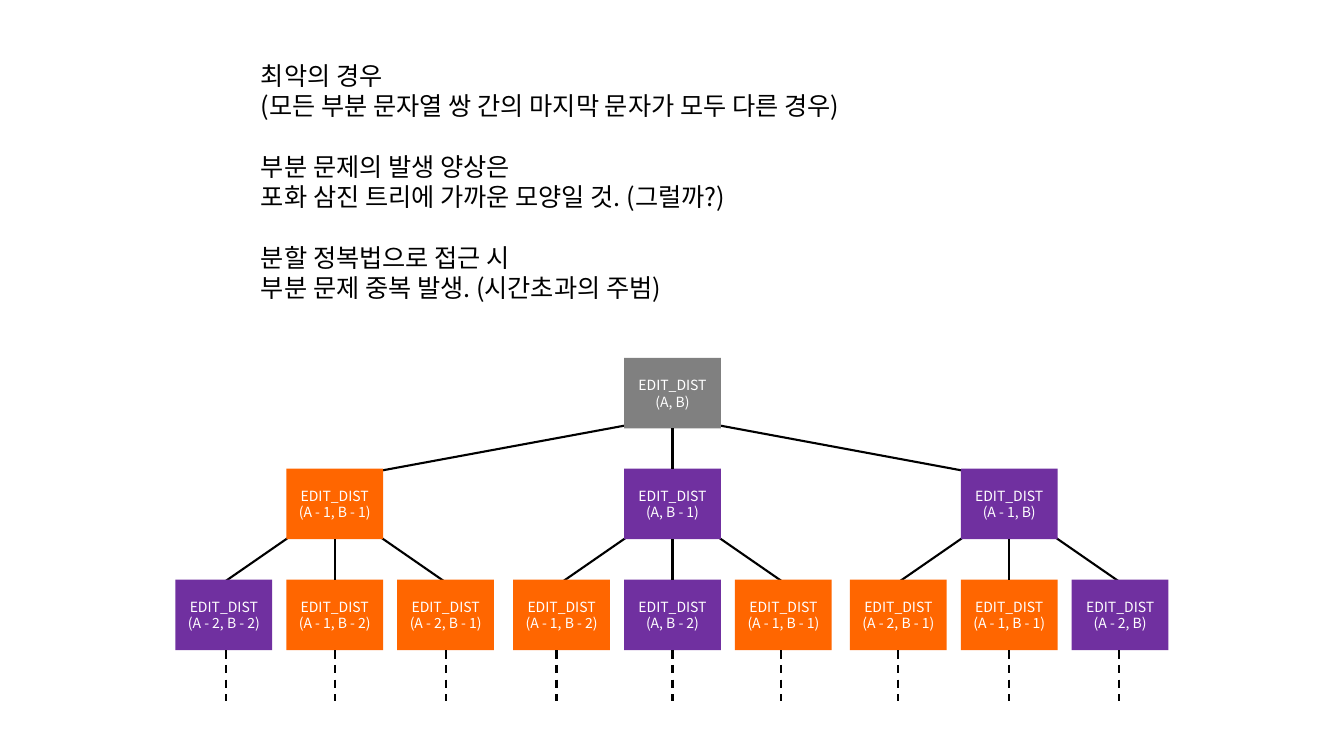
"""Build a slide showing the call tree of a recursive edit distance."""
from dataclasses import dataclass

from lxml import etree
from pptx import Presentation
from pptx import util as u
from pptx.dml.color import RGBColor
from pptx.enum import dml, shapes, text
from pptx.oxml.ns import qn

SCALE = 9144
FONT = "Noto Sans CJK KR"
BLACK, WHITE, GRAY = "000000", "FFFFFF", "808080"
ORANGE, PURPLE = "FF6600", "7030A0"
BOX_WIDTH, BOX_HEIGHT = 96, 70
ROOT_TOP, LEVEL_GAP, SIBLING_GAP = 355, 110, 110
STEM_LENGTH = 50
TOP, BOTTOM = 0, 2


@dataclass(frozen=True)
class Call:
    """One recursive call, with its box centre, level and stem offset."""
    arguments: str
    color: str
    center: int
    level: int
    stem_shift: int = 0

    @property
    def top(self) -> int:
        """Return the top of the box."""
        return ROOT_TOP + self.level * LEVEL_GAP

    @property
    def bottom(self) -> int:
        """Return the bottom of the box."""
        return self.top + BOX_HEIGHT


@dataclass(frozen=True)
class Branch:
    """A call of the middle level and its three leaves."""
    parent: Call
    leaves: tuple[Call, ...]


def make_branch(center: int, arguments: str, color: str,
                *leaves: tuple[str, str, int]) -> Branch:
    """Place three leaves evenly around their parent's centre."""
    return Branch(
        Call(arguments, color, center, 1),
        tuple(Call(words, fill, center + side * SIBLING_GAP, 2, shift)
              for side, (words, fill, shift) in zip((-1, 0, 1), leaves)))


ROOT = Call("(A, B)", GRAY, 667, 0)
BRANCHES = (
    make_branch(332, "(A - 1, B - 1)", ORANGE,
                ("(A - 2, B - 2)", PURPLE, 2),
                ("(A - 1, B - 2)", ORANGE, 0),
                ("(A - 2, B - 1)", ORANGE, 0)),
    make_branch(667, "(A, B - 1)", PURPLE,
                ("(A - 1, B - 2)", ORANGE, -5),
                ("(A, B - 2)", PURPLE, 0),
                ("(A - 1, B - 1)", ORANGE, -2)),
    make_branch(1001, "(A - 1, B)", PURPLE,
                ("(A - 2, B - 1)", ORANGE, 0),
                ("(A - 1, B - 1)", ORANGE, 0),
                ("(A - 2, B)", PURPLE, -1)),
)
NOTES = (
    ("최악의 경우", "(모든 부분 문자열 쌍 간의 마지막 문자가 모두 다른 경우)"),
    ("부분 문제의 발생 양상은", "포화 삼진 트리에 가까운 모양일 것. (그럴까?)"),
    ("분할 정복법으로 접근 시", "부분 문제 중복 발생. (시간초과의 주범)"),
)


def px(length: int) -> u.Emu:
    """Turn a length in px into EMU."""
    return u.Emu(length * SCALE)


def rgb(color: str) -> RGBColor:
    """Turn a hex string into a colour."""
    return RGBColor.from_string(color)


def style_paragraph(para, size: int, color: str) -> None:
    """Set the font and the line height of a paragraph."""
    para.font.name = FONT
    para.font.size = u.Pt(size)
    para.font.color.rgb = rgb(color)
    para.line_spacing = u.Pt(size * 1.2)
    properties = para._p.get_or_add_pPr().get_or_add_defRPr()
    etree.SubElement(properties, qn("a:ea")).set("typeface", FONT)


def add_line(page, start: tuple[int, int], end: tuple[int, int]):
    """Draw a straight black line."""
    line = page.shapes.add_connector(
        shapes.MSO_CONNECTOR.STRAIGHT, *map(px, start + end))
    line.line.color.rgb = rgb(BLACK)
    line.line.width = u.Pt(1.5)
    etree.SubElement(line._element.spPr, qn("a:effectLst"))
    return line


def add_call(page, call: Call):
    """Draw the box of one call."""
    box = page.shapes.add_shape(
        shapes.MSO_SHAPE.RECTANGLE, px(call.center - BOX_WIDTH // 2),
        px(call.top), px(BOX_WIDTH), px(BOX_HEIGHT))
    box.shadow.inherit = False
    box.fill.solid()
    box.fill.fore_color.rgb = rgb(call.color)
    box.line.fill.background()
    frame = box.text_frame
    frame.vertical_anchor = text.MSO_ANCHOR.MIDDLE
    frame.text = f"EDIT_DIST\n{call.arguments}"
    for para in frame.paragraphs:
        para.alignment = text.PP_ALIGN.CENTER
        style_paragraph(para, 10, WHITE)
    return box


def add_slanted_lines(page) -> None:
    """Draw the lines that fan out to the left and right children."""
    for side, branch in zip((-1, 0, 1), BRANCHES):
        parent = branch.parent
        if side:
            add_line(page, (ROOT.center + side * 46, ROOT.bottom - 3),
                     (parent.center - side * 40, parent.top + 3))
        for leaf_side in (-1, 1):
            add_line(page, (parent.center + leaf_side * 44, parent.bottom - 3),
                     (parent.center + leaf_side * 109, branch.leaves[0].top + 2))


def join_calls(page, upper: Call, lower: Call, boxes: dict) -> None:
    """Join two calls that stand one above the other."""
    line = add_line(page, (upper.center, upper.bottom),
                    (lower.center, lower.top))
    line.begin_connect(boxes[upper], BOTTOM)
    line.end_connect(boxes[lower], TOP)


def add_stem(page, leaf: Call, box) -> None:
    """Draw the dashed line below a leaf."""
    column = leaf.center + leaf.stem_shift
    stem = add_line(page, (column, leaf.bottom),
                    (column, leaf.bottom + STEM_LENGTH))
    stem.line.dash_style = dml.MSO_LINE.DASH
    if not leaf.stem_shift:
        stem.begin_connect(box, BOTTOM)


def add_notes(page) -> None:
    """Write the notes above the tree, with a line's gap between groups."""
    box = page.shapes.add_textbox(px(249), px(55), px(835), px(252))
    frame = box.text_frame
    frame.word_wrap = True
    frame.auto_size = text.MSO_AUTO_SIZE.SHAPE_TO_FIT_TEXT
    frame.text = "\n".join(line for group in NOTES for line in group)
    for index, para in enumerate(frame.paragraphs):
        style_paragraph(para, 18, BLACK)
        if index and index % 2 == 0:
            para.space_before = para.line_spacing


def main() -> None:
    """Build and save the deck."""
    deck = Presentation()
    deck.slide_width, deck.slide_height = px(1333), px(750)
    page = deck.slides.add_slide(deck.slide_layouts[6])
    add_slanted_lines(page)
    calls = [ROOT]
    for branch in BRANCHES:
        calls += [branch.parent, *branch.leaves]
    boxes = {call: add_call(page, call) for call in calls}
    join_calls(page, ROOT, BRANCHES[1].parent, boxes)
    for branch in BRANCHES:
        join_calls(page, branch.parent, branch.leaves[1], boxes)
        for leaf in branch.leaves:
            add_stem(page, leaf, boxes[leaf])
    add_notes(page)
    deck.save("out.pptx")


if __name__ == "__main__":
    main()
